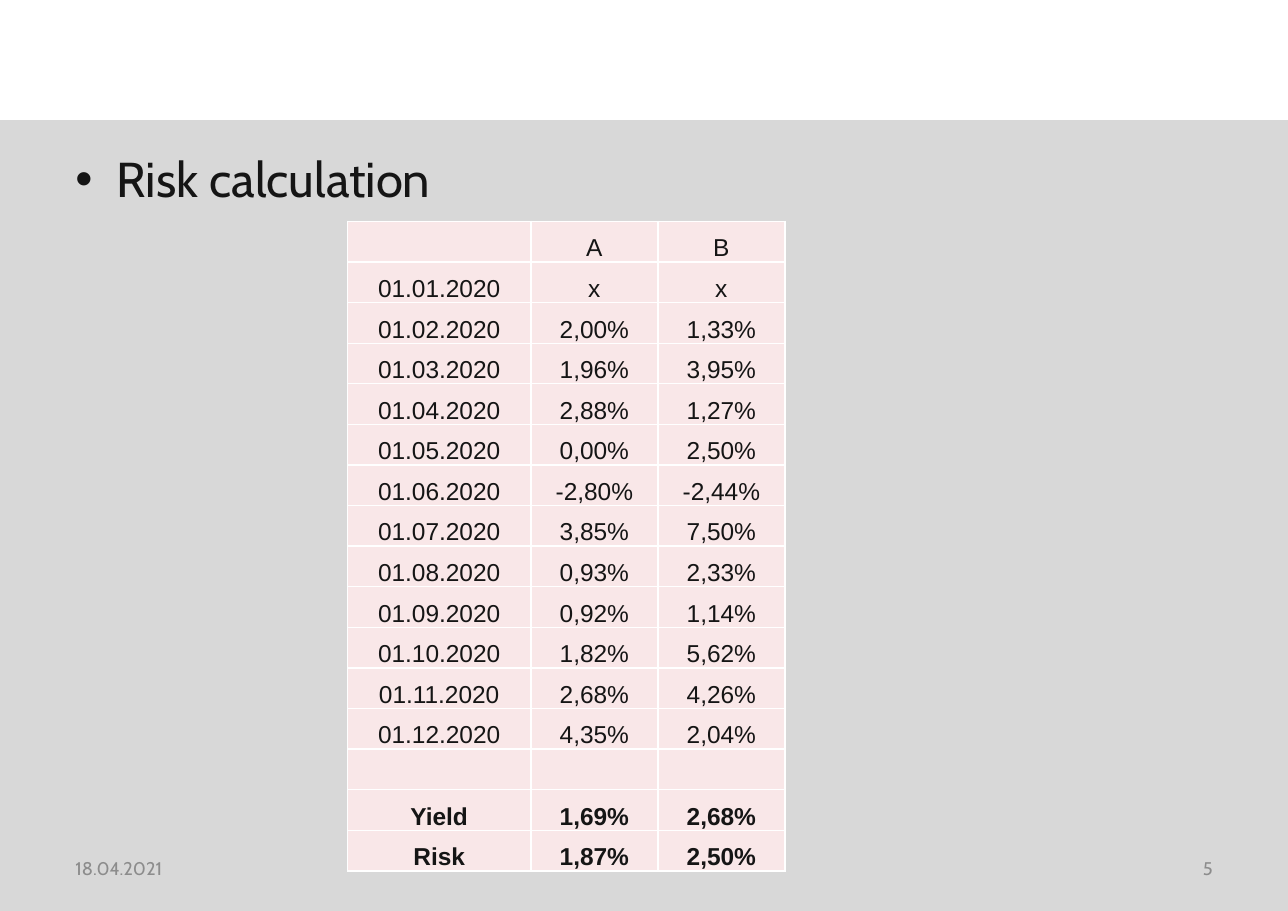
import pptx
import pptx.util
import pptx.dml.color
import pptx.enum.shapes
import pptx.enum.text
import pptx.oxml
from dataclasses import dataclass

Pt = pptx.util.Pt
Align = pptx.enum.text.PP_ALIGN
Anchor = pptx.enum.text.MSO_ANCHOR
NS = 'xmlns:a="http://schemas.openxmlformats.org/drawingml/2006/main"'


@dataclass
class Theme:
    panel: str = "D8D8D8"
    cell: str = "F9E7E8"
    rule: str = "FFFFFF"
    ink: str = "151515"
    muted: str = "8C8C8C"
    sans: str = "Cabin"
    grid: str = "Arial"
    head: int = 32
    body: int = 16
    foot: int = 12


theme = Theme()


def paint(fill, color):
    fill.solid()
    fill.fore_color.rgb = pptx.dml.color.RGBColor.from_string(color)


def write(frame, text, size, font, color, align=Align.LEFT, bold=False, bullet=None):
    para = frame.paragraphs[0]
    para.alignment = align
    if bullet:
        props = para._p.get_or_add_pPr()
        props.set("marL", str(Pt(27)))
        props.set("indent", str(Pt(-27)))
        props.append(pptx.oxml.parse_xml(f'<a:buFont {NS} typeface="Arial"/>'))
        props.append(pptx.oxml.parse_xml(f'<a:buChar {NS} char="{bullet}"/>'))
    run = para.add_run()
    run.text = text
    run.font.size = Pt(size)
    run.font.name = font
    run.font.bold = bold
    paint(run.font.fill, color)


deck = pptx.Presentation()
deck.slide_width = Pt(841.68)
deck.slide_height = Pt(595.44)
slide = deck.slides.add_slide(deck.slide_layouts[6])

panel = slide.shapes.add_shape(
    pptx.enum.shapes.MSO_SHAPE.RECTANGLE, 0, Pt(78.44), deck.slide_width, Pt(517)
)
panel.shadow.inherit = False
paint(panel.fill, theme.panel)
panel.line.fill.background()

title = slide.shapes.add_textbox(Pt(42.2), Pt(93.6), Pt(757.4), Pt(438.5)).text_frame
title.word_wrap = True
write(title, "Risk calculation", size=theme.head, font=theme.sans, color=theme.ink, bullet="•")

for text, left, align in [("18.04.2021", 42.2, Align.LEFT), ("5", 603.2, Align.RIGHT)]:
    foot = slide.shapes.add_textbox(Pt(left), Pt(551.5), Pt(196.4), Pt(31.7)).text_frame
    foot.word_wrap = True
    foot.vertical_anchor = Anchor.MIDDLE
    write(foot, text, size=theme.foot, font=theme.sans, color=theme.muted, align=align)

rates = [
    ("x", "x"),
    ("2,00%", "1,33%"),
    ("1,96%", "3,95%"),
    ("2,88%", "1,27%"),
    ("0,00%", "2,50%"),
    ("-2,80%", "-2,44%"),
    ("3,85%", "7,50%"),
    ("0,93%", "2,33%"),
    ("0,92%", "1,14%"),
    ("1,82%", "5,62%"),
    ("2,68%", "4,26%"),
    ("4,35%", "2,04%"),
]
months = [(f"01.{month:02}.2020", *pair) for month, pair in enumerate(rates, 1)]
totals = [("Yield", "1,69%", "2,68%"), ("Risk", "1,87%", "2,50%")]
rows = [("", "A", "B"), *months, ("", "", ""), *totals]
widths = [119.8, 83, 83]
height = 26.55

table = slide.shapes.add_table(
    len(rows), len(widths), Pt(227.1), Pt(144.7), Pt(sum(widths)), Pt(height * len(rows))
).table
table.first_row = False
table.horz_banding = False
for col, width in zip(table.columns, widths):
    col.width = Pt(width)

for r, row in enumerate(rows):
    table.rows[r].height = Pt(height)
    for c, text in enumerate(row):
        cell = table.cell(r, c)
        cell.margin_left = cell.margin_right = cell.margin_top = Pt(0.7)
        cell.margin_bottom = 0
        cell.vertical_anchor = Anchor.BOTTOM
        props = cell._tc.get_or_add_tcPr()
        for side in "LRTB":
            props.append(pptx.oxml.parse_xml(
                f'<a:ln{side} {NS} w="{Pt(1)}"><a:solidFill>'
                f'<a:srgbClr val="{theme.rule}"/></a:solidFill></a:ln{side}>'
            ))
        paint(cell.fill, theme.cell)
        if text:
            write(cell.text_frame, text, size=theme.body, font=theme.grid,
                  color=theme.ink, align=Align.CENTER, bold=row in totals)

deck.save("out.pptx")
